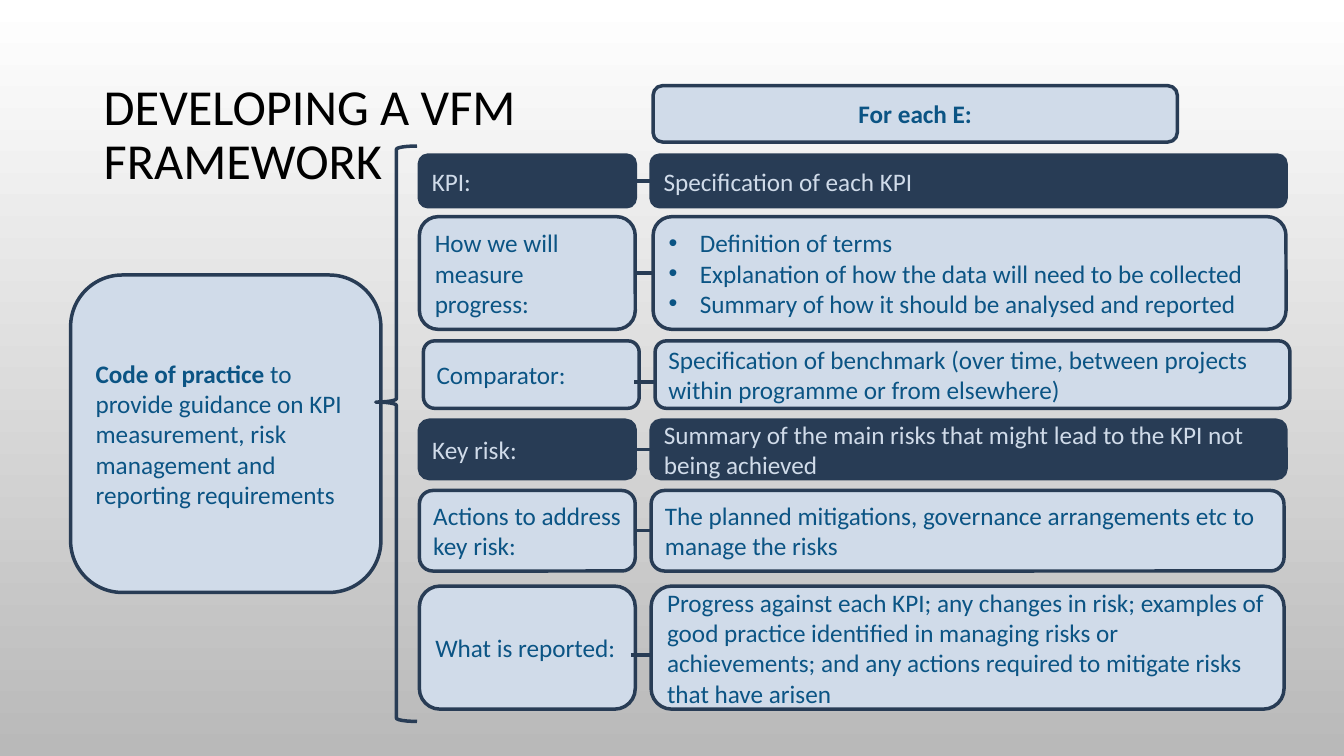
from dataclasses import dataclass

from lxml.etree import SubElement
from pptx import Presentation
from pptx.dml.color import RGBColor
from pptx.enum.shapes import MSO_CONNECTOR as Connector, MSO_SHAPE as Preset
from pptx.enum.text import MSO_ANCHOR as Anchor, MSO_AUTO_SIZE as AutoSize, PP_ALIGN as Align
from pptx.oxml.ns import qn
from pptx.util import Cm, Pt


@dataclass(frozen=True)
class Theme:
    navy: RGBColor = RGBColor.from_string("283C55")
    pale: RGBColor = RGBColor.from_string("D0DBE9")
    blue: RGBColor = RGBColor.from_string("0B5484")
    black: RGBColor = RGBColor.from_string("000000")
    background_top: RGBColor = RGBColor.from_string("FFFFFF")
    background_bottom: RGBColor = RGBColor.from_string("B9B9B9")
    font: str = "Calibri"
    title_size: Pt = Pt(36)
    body_size: Pt = Pt(18)
    line_width: Pt = Pt(2.5)


@dataclass(frozen=True)
class Row:
    label: str
    details: tuple
    top: float
    height: float
    dark: bool = False
    shift: float = 0
    detail_left: float = 16.41
    detail_width: float = 15.95
    loose_line: tuple = ()


THEME = Theme()
LABEL_LEFT, LABEL_WIDTH = 10.57, 5.44
RIGHT_SIDE, LEFT_SIDE = 3, 1
BULLET_INDENT = Cm(0.79)

ROWS = [
    Row("KPI:", ("Specification of each KPI",), 3.91, 1.3, dark=True, detail_width=16),
    Row("How we will measure progress:",
        ("Definition of terms",
         "Explanation of how the data will need to be collected",
         "Summary of how it should be analysed and reported"),
        5.46, 2.84, detail_left=16.46),
    Row("Comparator:",
        ("Specification of benchmark (over time, between projects within programme "
         "or from elsewhere)",),
        8.59, 1.7, shift=0.1, detail_width=16, loose_line=(15.98, 16.56, 9.63)),
    Row("Key risk:",
        ("Summary of the main risks that might lead to the KPI not being achieved",),
        10.59, 1.47, dark=True, detail_width=16),
    Row("Actions to address key risk:",
        ("The planned mitigations, governance arrangements etc to manage the risks",),
        12.36, 2.03),
    Row("What is reported:",
        ("Progress against each KPI; any changes in risk; examples of good practice "
         "identified in managing risks or achievements; and any actions required to "
         "mitigate risks that have arisen",),
        14.77, 3.1, loose_line=(15.9, 16.43, 16.51)),
]


def apply_format(target, values):
    for name, value in values.items():
        setattr(target, name, value)


def format_font(font, color, size=THEME.body_size, bold=False):
    apply_format(font, {"name": THEME.font, "size": size, "bold": bold})
    font.color.rgb = color


def format_line(line):
    line.color.rgb = THEME.navy
    line.width = THEME.line_width


def paint_background(slide):
    fill = slide.background.fill
    fill.gradient()
    fill.gradient_angle = 270
    colors = (THEME.background_top, THEME.background_bottom)
    for position, (stop, color) in enumerate(zip(fill.gradient_stops, colors)):
        stop.position = position
        stop.color.rgb = color


def set_title(slide, text):
    title = slide.shapes.title
    apply_format(title, {"left": Cm(2.36), "top": Cm(-1.04),
                         "width": Cm(11.86), "height": Cm(8.94)})
    frame = title.text_frame
    frame.text = text
    apply_format(frame, {"word_wrap": True, "auto_size": AutoSize.NONE,
                         "vertical_anchor": Anchor.MIDDLE})
    paragraph = frame.paragraphs[0]
    apply_format(paragraph, {"alignment": Align.LEFT, "line_spacing": 0.9})
    format_font(paragraph.runs[0].font, THEME.black, THEME.title_size)


def add_bullet(paragraph):
    properties = paragraph._p.get_or_add_pPr()
    properties.set("marL", str(BULLET_INDENT))
    properties.set("indent", str(-BULLET_INDENT))
    SubElement(properties, qn("a:buFont"), typeface="Arial")
    SubElement(properties, qn("a:buChar"), char="•")


def add_box(slide, bounds, paragraphs, dark=False, align=Align.LEFT):
    shape = slide.shapes.add_shape(Preset.ROUNDED_RECTANGLE, *map(Cm, bounds))
    shape.shadow.inherit = False
    shape.fill.solid()
    shape.fill.fore_color.rgb = THEME.navy if dark else THEME.pale
    format_line(shape.line)
    frame = shape.text_frame
    apply_format(frame, {"word_wrap": True, "vertical_anchor": Anchor.MIDDLE})
    for index, runs in enumerate(paragraphs):
        paragraph = frame.add_paragraph() if index else frame.paragraphs[0]
        paragraph.alignment = align
        if len(paragraphs) > 1:
            add_bullet(paragraph)
        for text, bold in runs:
            run = paragraph.add_run()
            run.text = text
            format_font(run.font, THEME.pale if dark else THEME.blue, bold=bold)
    return shape


def add_line(slide, label, detail, loose_line):
    start, end, height = map(Cm, loose_line or (0, 0, 0))
    connector = slide.shapes.add_connector(Connector.STRAIGHT, start, height, end, height)
    if not loose_line:
        connector.begin_connect(label, RIGHT_SIDE)
        connector.end_connect(detail, LEFT_SIDE)
    format_line(connector.line)
    SubElement(connector._element.spPr, qn("a:effectLst"))


def add_row(slide, row):
    label = add_box(slide, (LABEL_LEFT + row.shift, row.top, LABEL_WIDTH, row.height),
                    [[(row.label, False)]], row.dark)
    detail = add_box(slide,
                     (row.detail_left + row.shift, row.top, row.detail_width, row.height),
                     [[(text, False)] for text in row.details], row.dark)
    add_line(slide, label, detail, row.loose_line)


def add_brace(slide):
    brace = slide.shapes.add_shape(Preset.LEFT_BRACE, Cm(9.47), Cm(3.68), Cm(1.04), Cm(14.5))
    brace.shadow.inherit = False
    brace.fill.background()
    format_line(brace.line)
    brace.adjustments[0] = 0.08
    brace.adjustments[1] = 0.445


def main():
    presentation = Presentation()
    apply_format(presentation, {"slide_width": Cm(33.87), "slide_height": Cm(19.05)})
    slide = presentation.slides.add_slide(presentation.slide_layouts.get_by_name("Title Only"))
    paint_background(slide)
    set_title(slide, "DEVELOPING A VFM FRAMEWORK")
    add_box(slide, (16.46, 2.16, 13.21, 1.42), [[("For each E:", True)]], align=Align.CENTER)
    for row in ROWS:
        add_row(slide, row)
    add_box(slide, (1.78, 6.93, 7.82, 8),
            [[("Code of practice ", True),
              ("to provide guidance on KPI measurement, risk management and "
               "reporting requirements", False)]])
    add_brace(slide)
    presentation.save("out.pptx")


if __name__ == "__main__":
    main()
